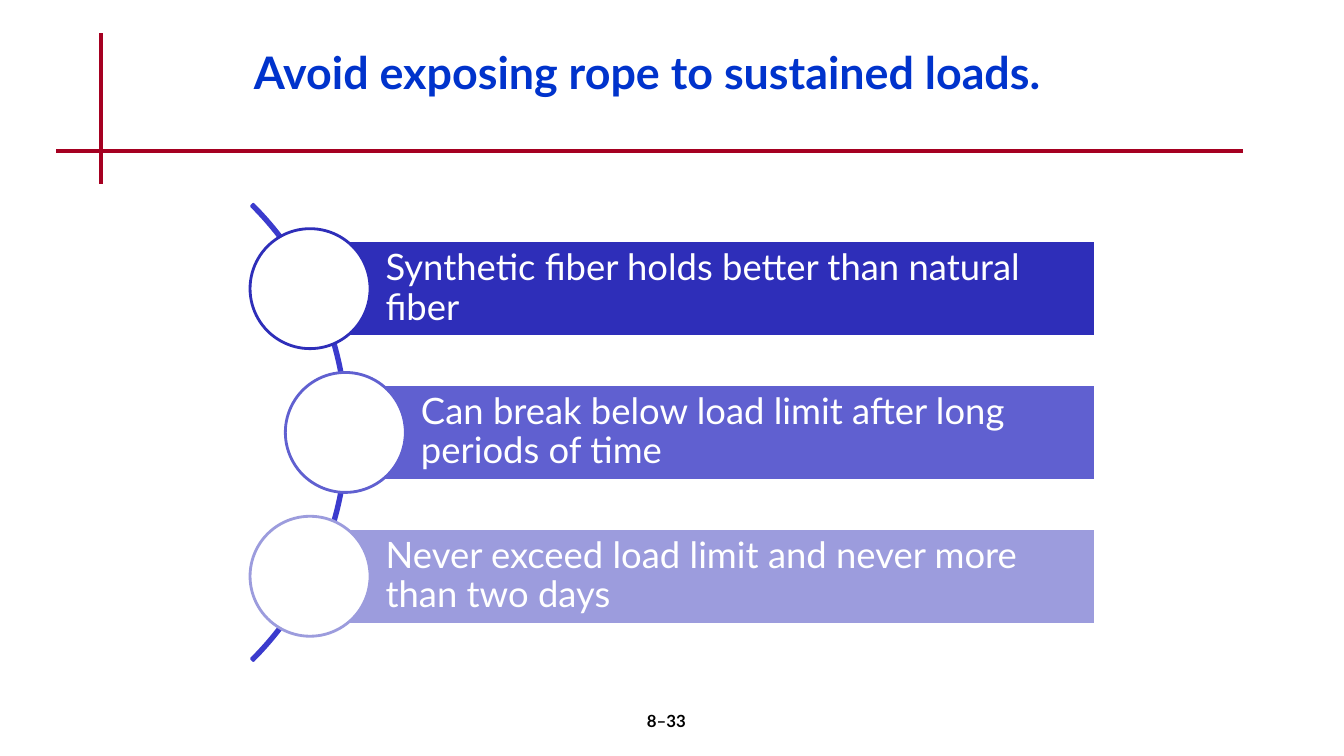
from pptx import Presentation
from pptx.dml.color import RGBColor
from pptx.enum.shapes import MSO_CONNECTOR, MSO_SHAPE
from pptx.enum.text import MSO_ANCHOR, PP_ALIGN
from pptx.oxml.ns import qn
from pptx.util import Inches, Pt

LINE = MSO_CONNECTOR.STRAIGHT
RECT, OVAL, ARC = MSO_SHAPE.RECTANGLE, MSO_SHAPE.OVAL, MSO_SHAPE.BLOCK_ARC
TOP, MIDDLE = MSO_ANCHOR.TOP, MSO_ANCHOR.MIDDLE
LEFT, CENTER = PP_ALIGN.LEFT, PP_ALIGN.CENTER
FONT = "Lato"

POINTS = [
    ("Synthetic fiber holds better than natural fiber", "2E2EB9", 0),
    ("Can break below load limit after long periods of time", "6060D0", 0.35),
    ("Never exceed load limit and never more than two days", "9C9CDD", 0),
]


def rgb(value):
    return RGBColor.from_string(value)


def add_line(s, x1, y1, x2, y2, color, width):
    line = s.shapes.add_connector(LINE, Inches(x1), Inches(y1), Inches(x2), Inches(y2))
    line.line.color.rgb = rgb(color)
    line.line.width = Pt(width)
    sp_pr = line._element.spPr
    sp_pr.append(sp_pr.makeelement(qn("a:effectLst"), {}))


def add_shape(s, kind, x, y, w, h, fill, outline):
    sp = s.shapes.add_shape(kind, Inches(x), Inches(y), Inches(w), Inches(h))
    sp.shadow.inherit = False
    if fill:
        sp.fill.solid()
        sp.fill.fore_color.rgb = rgb(fill)
    else:
        sp.fill.background()
    sp.line.color.rgb = rgb(outline)
    sp.line.width = Pt(2)
    return sp


def set_text(sp, text, size, color, bold=False, align=LEFT, anchor=TOP, spacing=1.0):
    tf = sp.text_frame
    tf.text = text
    tf.word_wrap = True
    tf.vertical_anchor = anchor
    p = tf.paragraphs[0]
    p.alignment = align
    p.line_spacing = spacing
    font = p.runs[0].font
    font.name, font.size, font.bold = FONT, Pt(size), bold
    font.color.rgb = rgb(color)
    return tf


def add_text(s, x, y, w, h, text, size, color, **style):
    sp = s.shapes.add_textbox(Inches(x), Inches(y), Inches(w), Inches(h))
    set_text(sp, text, size, color, bold=True, **style)


def add_header(s, x, y, w, h):
    add_line(s, x + 0.44, y, x + 0.44, y + h, "A50021", 3)
    add_line(s, x, y + 1.17, x + w, y + 1.17, "A50021", 3)
    add_text(s, x + 1.86, y + 0.17, 8.5, 1,
             "Avoid exposing rope to sustained loads.", 32, "0033CC", spacing=0.8)


def add_curved_list(s, x, y, w, h):
    circle, bar_h, arc_d = 1.19, 0.95, 6.4
    pitch = h / len(POINTS)
    arc = add_shape(s, ARC, x + 0.97 - arc_d, y + (h - arc_d) / 2, arc_d, arc_d,
                    None, "3B3BCD")
    arc.adjustments[0] = 189
    arc.adjustments[1] = 27
    arc.adjustments[2] = 0.004
    for i, (text, color, indent) in enumerate(POINTS):
        bar_x = x + circle / 2 + indent
        mid = y + (i + 0.5) * pitch
        bar = add_shape(s, RECT, bar_x, mid - bar_h / 2, x + w - bar_x, bar_h,
                        color, "FFFFFF")
        tf = set_text(bar, text, 26, "FFFFFF", anchor=MIDDLE, spacing=0.9)
        tf.margin_left = Inches(0.75)
        tf.margin_top = tf.margin_right = tf.margin_bottom = Inches(0.07)
        add_shape(s, OVAL, bar_x - circle / 2, mid - circle / 2, circle, circle,
                  "FFFFFF", color)


def add_footer(s, x, y, w, h):
    add_text(s, x, y, w, h, "8–33", 12, "000000", align=CENTER)


def main():
    prs = Presentation()
    prs.slide_width, prs.slide_height = Inches(13.33), Inches(7.5)
    s = prs.slides.add_slide(prs.slide_layouts[6])
    add_header(s, 0.56, 0.33, 11.77, 1.5)
    add_curved_list(s, 2.48, 2.15, 8.38, 4.28)
    add_footer(s, 5.22, 7, 2.78, 0.5)
    prs.save("out.pptx")


if __name__ == "__main__":
    main()
